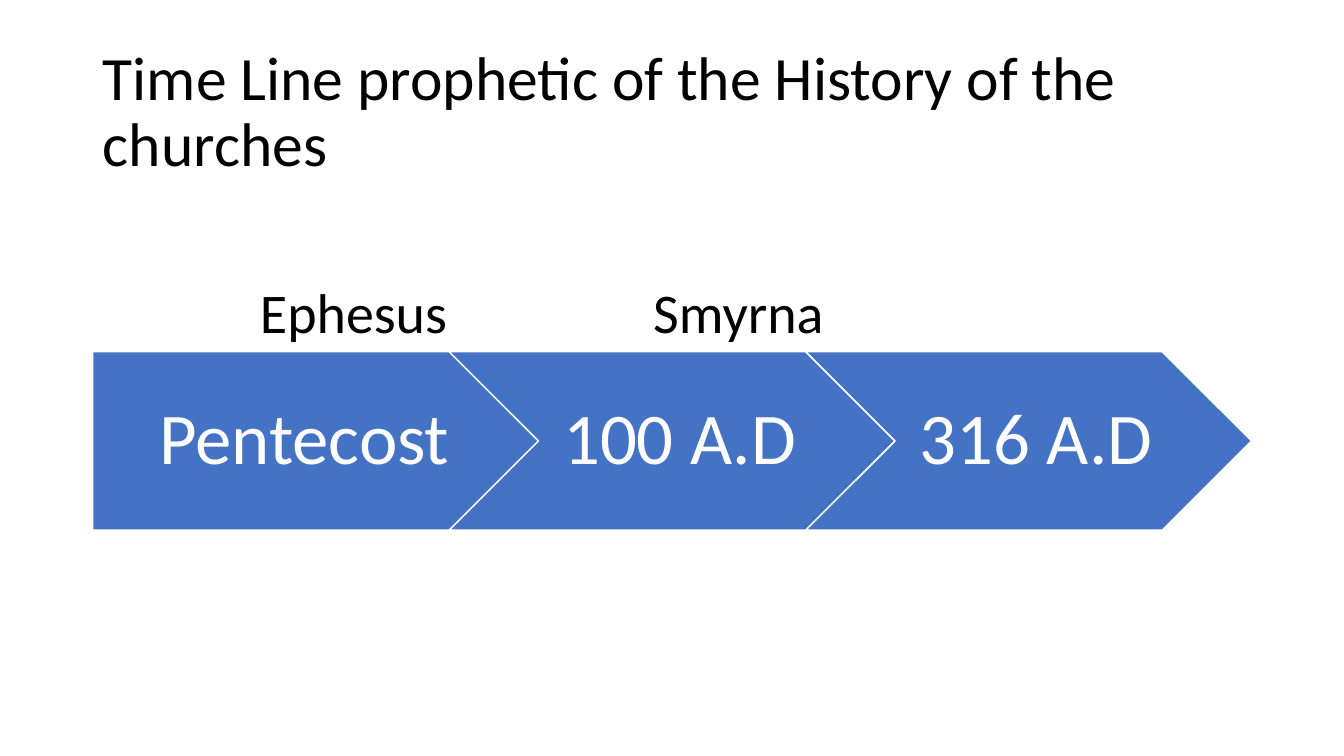
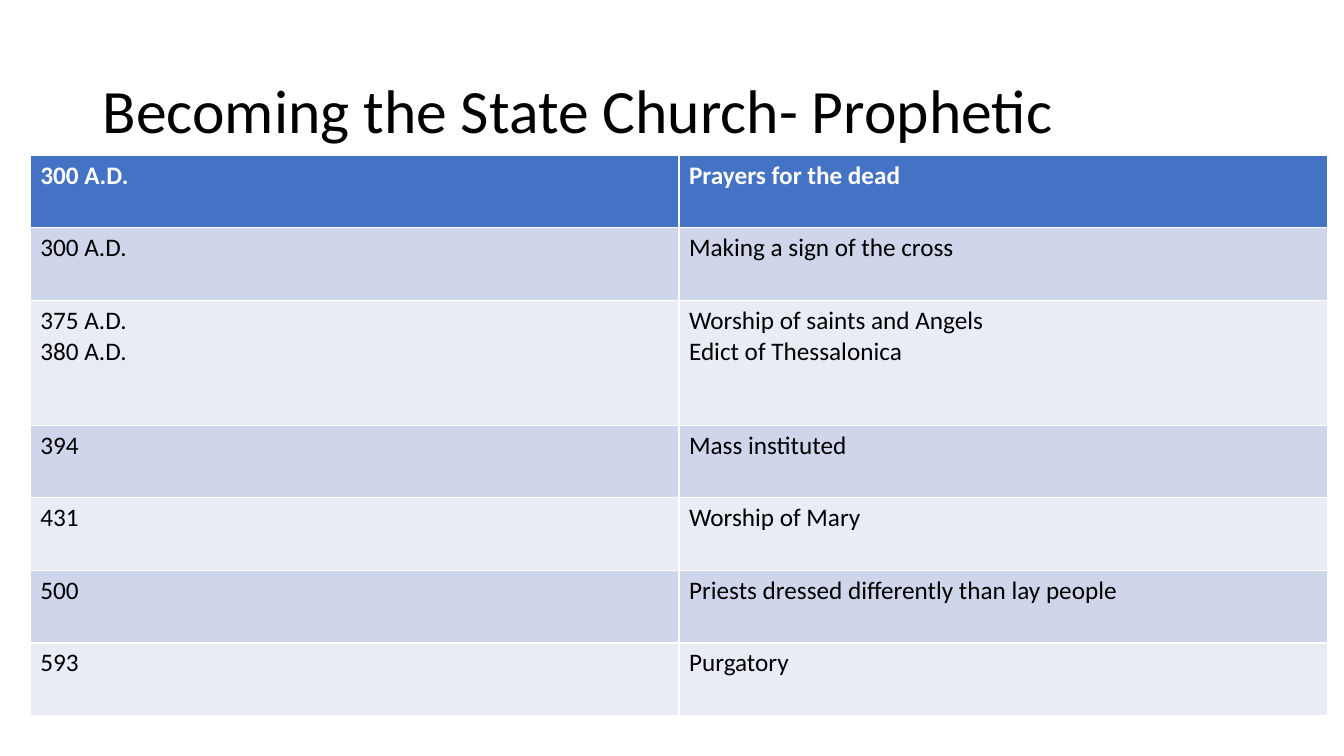
from pptx import Presentation
from pptx.dml.color import RGBColor
from pptx.enum.shapes import MSO_SHAPE
from pptx.enum.text import MSO_ANCHOR, MSO_AUTO_SIZE, PP_ALIGN
from pptx.util import Inches, Pt

PENTAGON, CHEVRON = MSO_SHAPE.PENTAGON, MSO_SHAPE.CHEVRON
LEFT, CENTER = PP_ALIGN.LEFT, PP_ALIGN.CENTER
TOP, MIDDLE = MSO_ANCHOR.TOP, MSO_ANCHOR.MIDDLE

BLUE = RGBColor(0x44, 0x72, 0xC4)
DARK_BAND = RGBColor(0xCF, 0xD5, 0xEA)
LIGHT_BAND = RGBColor(0xE9, 0xEB, 0xF5)
WHITE = RGBColor(0xFF, 0xFF, 0xFF)
BLACK = RGBColor(0x00, 0x00, 0x00)
FONT = "Calibri"
TITLE_ONLY = 5


def write_text(frame, text, size=18, color=BLACK, bold=False, align=LEFT,
               anchor=TOP, spacing=1.0):
    """Fill the frame with one paragraph for each line of text."""
    frame.text = text
    frame.vertical_anchor = anchor
    for paragraph in frame.paragraphs:
        paragraph.alignment = align
        paragraph.line_spacing = spacing
        font = paragraph.runs[0].font
        font.name, font.size, font.bold = FONT, Pt(size), bold
        font.color.rgb = color


def add_titled_slide(title_text):
    slide = presentation.slides.add_slide(presentation.slide_layouts[TITLE_ONLY])
    title = slide.shapes.title
    title.left, title.top = Inches(0.92), Inches(0.4)
    title.width, title.height = Inches(11.5), Inches(1.45)
    write_text(title.text_frame, title_text, size=44, anchor=MIDDLE, spacing=0.9)
    return slide


presentation = Presentation()
presentation.slide_width = Inches(13.33)
presentation.slide_height = Inches(7.5)

# Timeline of the churches
slide = add_titled_slide("Time Line prophetic of the History of the churches")

STEP_WIDTH = 4.42
STEP_PITCH = STEP_WIDTH * 0.8
steps = [
    ("Pentecost", PENTAGON, 0.3),
    ("100 A.D", CHEVRON, 0.23),
    ("316 A.D", CHEVRON, 0.23),
]
for index, (text, kind, left_inset) in enumerate(steps):
    step = slide.shapes.add_shape(
        kind, Inches(0.92 + index * STEP_PITCH), Inches(3.49),
        Inches(STEP_WIDTH), Inches(1.77))
    step.shadow.inherit = False
    step.fill.solid()
    step.fill.fore_color.rgb = BLUE
    step.line.color.rgb = WHITE
    step.line.width = Pt(1)
    frame = step.text_frame
    frame.word_wrap = True
    frame.margin_left, frame.margin_right = Inches(left_inset), Inches(0.08)
    frame.margin_top = frame.margin_bottom = Inches(0.15)
    write_text(frame, text, size=52, color=WHITE, align=CENTER, anchor=MIDDLE,
               spacing=0.9)

for text, left, width in [("Ephesus", 2.48, 2.08), ("Smyrna", 6.38, 1.91)]:
    label = slide.shapes.add_textbox(
        Inches(left), Inches(2.7), Inches(width), Inches(0.77))
    label.text_frame.word_wrap = False
    label.text_frame.auto_size = MSO_AUTO_SIZE.SHAPE_TO_FIT_TEXT
    write_text(label.text_frame, text, size=40)

# Table of church practices
slide = add_titled_slide("Becoming the State Church- Prophetic")

practices = [
    ("300 A.D.", "Prayers for the dead"),
    ("300 A.D.", "Making a sign of the cross"),
    ("375 A.D.\n380 A.D.", "Worship of saints and Angels\nEdict of Thessalonica"),
    ("394", "Mass instituted"),
    ("431", "Worship of Mary"),
    ("500", "Priests dressed differently than lay people"),
    ("593", "Purgatory"),
]
table = slide.shapes.add_table(
    len(practices), 2, Inches(0.3), Inches(1.54), Inches(12.87), Inches(5.56)).table
for row_index, practice in enumerate(practices):
    is_header = row_index == 0
    is_double = "\n" in practice[0]
    table.rows[row_index].height = Inches(1.24 if is_double else 0.72)
    band = DARK_BAND if row_index % 2 else LIGHT_BAND
    for column_index, text in enumerate(practice):
        cell = table.cell(row_index, column_index)
        cell.fill.solid()
        cell.fill.fore_color.rgb = BLUE if is_header else band
        write_text(cell.text_frame, text, bold=is_header,
                   color=WHITE if is_header else BLACK)

presentation.save("out.pptx")
